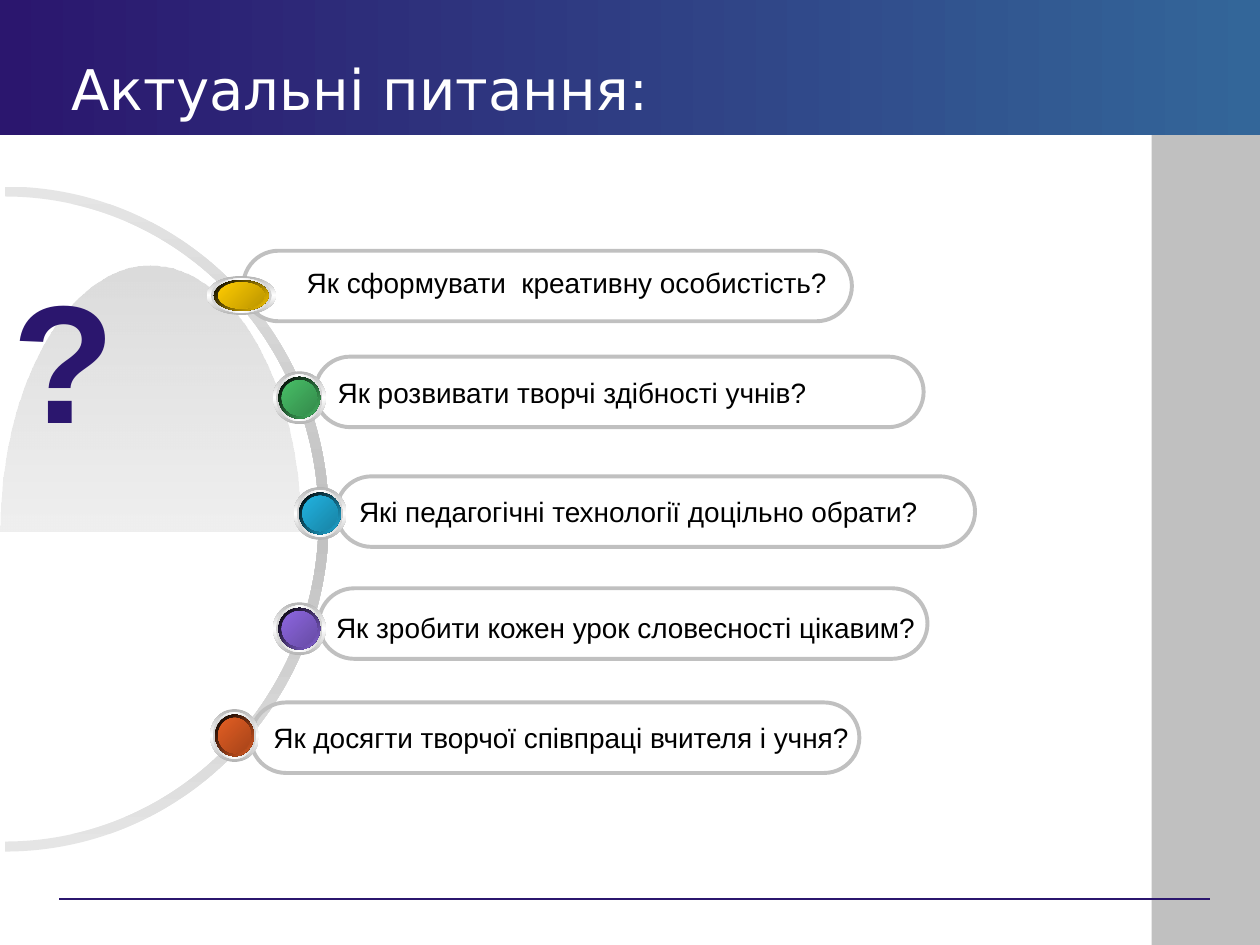
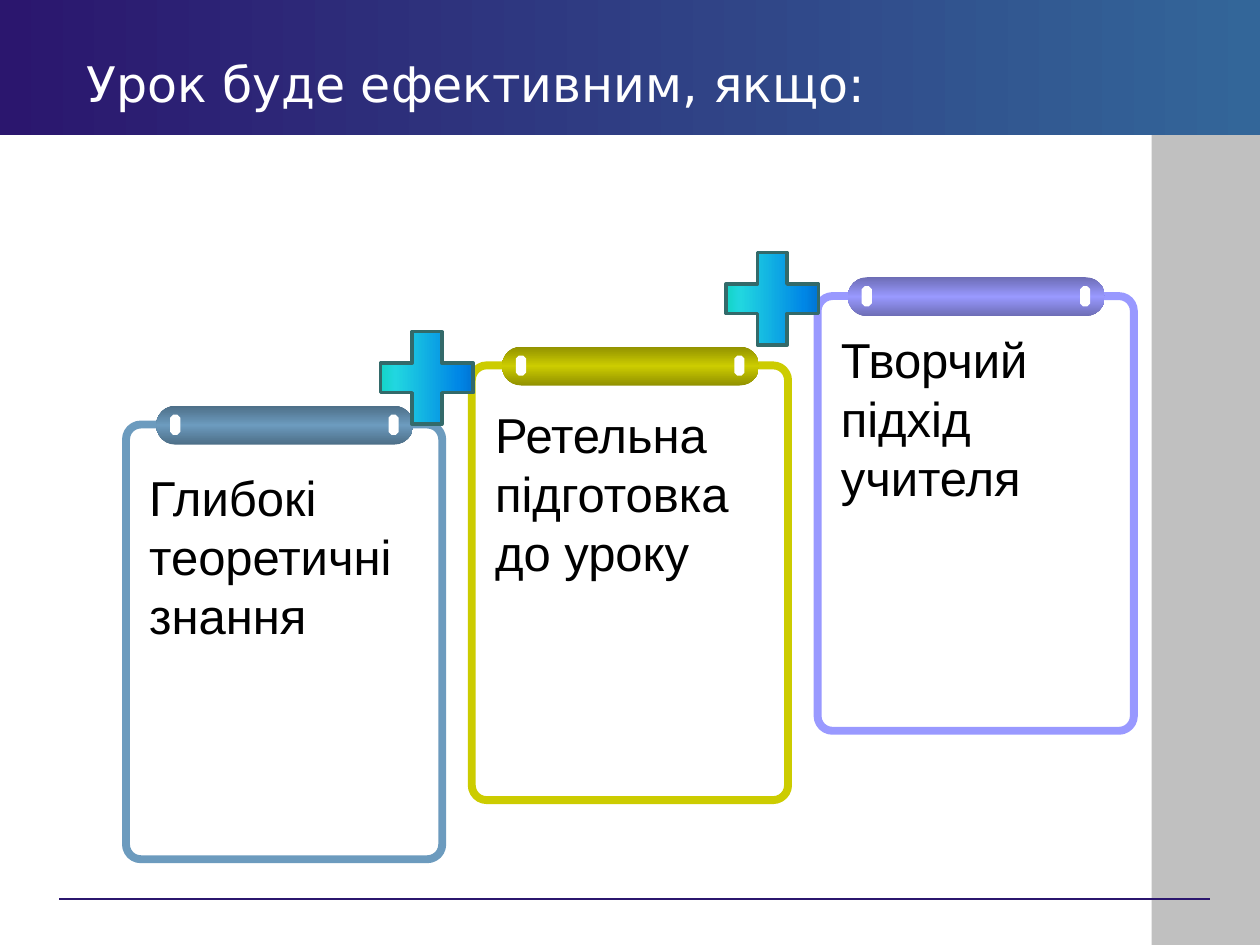
from dataclasses import dataclass

from lxml.etree import SubElement
from pptx import Presentation
from pptx.dml.color import RGBColor
from pptx.enum.shapes import MSO_CONNECTOR as Connector
from pptx.enum.shapes import MSO_SHAPE as Preset
from pptx.enum.text import MSO_ANCHOR as Anchor
from pptx.enum.text import PP_ALIGN as Align
from pptx.oxml.ns import qn
from pptx.shapes.autoshape import Shape
from pptx.slide import Slide
from pptx.text.text import TextFrame
from pptx.util import Pt

COLORS = {
    "navy": "2B166E", "steel": "336699", "silver": "C0C0C0",
    "pale": "E5E5E5", "white": "FFFFFF", "black": "000000",
    "gold": "FFCC00", "green": "48BE67", "cyan": "21B3E1",
    "violet": "8D67E1", "rust": "E35E23",
    "sky": "6C9BBE", "olive": "CCCC00", "lilac": "9999FF",
    "mint": "03D4A8", "aqua": "21D6E0", "azure": "0087E6",
    "cobalt": "005CBF", "plus_edge": "336A6A",
}
BODY_FONT = "Arial"
TITLE_FONT = "DejaVu Sans"
QUARTER_CURVE = 0.5523

Point = tuple[float, float]


@dataclass(frozen=True)
class Box:
    left: float
    top: float
    width: float
    height: float

    def scaled(self, ratio: float) -> "Box":
        width, height = self.width * ratio, self.height * ratio
        return Box(self.left + (self.width - width) / 2,
                   self.top + (self.height - height) / 2, width, height)

    def lengths(self) -> tuple[Pt, Pt, Pt, Pt]:
        return Pt(self.left), Pt(self.top), Pt(self.width), Pt(self.height)


@dataclass(frozen=True)
class Stop:
    position: int
    color: str
    opacity: int = 100
    shade: int = 100


@dataclass(frozen=True)
class Segment:
    end: Point
    corner: Point | None = None


@dataclass(frozen=True)
class Question:
    text: str
    pill: Box
    button: Box
    color: str
    indent: float = 7.2
    raised: float = 0
    lowered: float = 0


@dataclass(frozen=True)
class Condition:
    text: str
    top: float
    text_drop: float
    color: str


QUESTIONS = [
    Question("Як сформувати  креативну особистість?", Box(139, 143.3, 347.8, 40.3),
             Box(118.1, 157.7, 39.6, 22.3), "gold", indent=30.4, raised=4),
    Question("Як розвивати творчі здібності учнів?", Box(180, 203.8, 347.8, 40.3),
             Box(156, 212.2, 30.2, 30.2), "green"),
    Question("Які педагогічні технології доцільно обрати?", Box(192.2, 272.2, 365, 40.3),
             Box(167.8, 278.3, 30.2, 30.2), "cyan"),
    Question("Як зробити кожен урок словесності цікавим?", Box(182.2, 336.2, 347.8, 40.3),
             Box(156, 344.2, 30.2, 30.2), "violet", indent=4, lowered=4.5),
    Question("Як досягти творчої співпраці вчителя і учня?", Box(143.3, 401.4, 347.8, 40.3),
             Box(120, 405.2, 28.1, 30.2), "rust"),
]
CONDITIONS = [
    Condition("Глибокі теоретичні знання", 242.6, 20.9, "sky"),
    Condition("Ретельна підготовка до уроку", 208.8, 18.7, "olive"),
    Condition("Творчий підхід учителя", 169.2, 15.8, "lilac"),
]
CARD_LEFT, CARD_STEP, CARD_WIDTH, CARD_HEIGHT = 72, 197.6, 180.7, 248.4
PLUS_STOPS = [Stop(0, "mint"), Stop(25, "aqua"), Stop(75, "azure"), Stop(100, "cobalt")]


def rgb(color: str) -> RGBColor:
    return RGBColor.from_string(COLORS[color])


def fill_gradient(shape: Shape, stops: list[Stop], angle: int) -> None:
    shape.fill.solid()
    properties = shape.element.spPr
    solid = properties.find(qn("a:solidFill"))
    gradient = properties.makeelement(qn("a:gradFill"), {"rotWithShape": "1"})
    properties.replace(solid, gradient)
    stop_list = SubElement(gradient, qn("a:gsLst"))
    for stop in stops:
        entry = SubElement(stop_list, qn("a:gs"), pos=str(stop.position * 1000))
        color = SubElement(entry, qn("a:srgbClr"), val=COLORS[stop.color])
        for effect, percent in (("a:shade", stop.shade), ("a:alpha", stop.opacity)):
            if percent < 100:
                SubElement(color, qn(effect), val=str(percent * 1000))
    SubElement(gradient, qn("a:lin"), ang=str(angle * 60000), scaled="0")


def fade(start: str, end: str, end_shade: int = 100) -> list[Stop]:
    return [Stop(0, start), Stop(100, end, shade=end_shade)]


def sheen(edge: str, middle: str, edge_shade: int = 100) -> list[Stop]:
    return [Stop(0, edge, shade=edge_shade), Stop(50, middle),
            Stop(100, edge, shade=edge_shade)]


def add_preset(slide: Slide, preset: Preset, box: Box, fill: str | None = None,
               line: str | None = None, weight: float = 0,
               roundness: float | None = None) -> Shape:
    shape = slide.shapes.add_shape(preset, *box.lengths())
    shape.shadow.inherit = False
    if roundness is not None:
        shape.adjustments[0] = roundness
    if fill:
        shape.fill.solid()
        shape.fill.fore_color.rgb = rgb(fill)
    else:
        shape.fill.background()
    if line:
        shape.line.color.rgb = rgb(line)
        shape.line.width = Pt(weight)
    else:
        shape.line.fill.background()
    return shape


def toward(start: Point, corner: Point) -> Point:
    return (start[0] + QUARTER_CURVE * (corner[0] - start[0]),
            start[1] + QUARTER_CURVE * (corner[1] - start[1]))


def add_outline(slide: Slide, start: Point, segments: list[Segment]) -> Shape:
    builder = slide.shapes.build_freeform(Pt(start[0]), Pt(start[1]))
    builder.add_line_segments([(Pt(s.end[0]), Pt(s.end[1])) for s in segments], close=True)
    shape = builder.convert_to_shape()
    shape.shadow.inherit = False
    shape.line.fill.background()
    straights = list(shape.element.spPr.iter(qn("a:lnTo")))
    for straight, segment in zip(straights, segments):
        if segment.corner:
            curve = straight.makeelement(qn("a:cubicBezTo"), {})
            for x, y in (toward(start, segment.corner),
                         toward(segment.end, segment.corner), segment.end):
                SubElement(curve, qn("a:pt"), x=str(Pt(x) - shape.left),
                           y=str(Pt(y) - shape.top))
            straight.getparent().replace(straight, curve)
        start = segment.end
    return shape


def write(frame: TextFrame, text: str, size: float, color: str, font: str = BODY_FONT,
          bold: bool = False, anchor: Anchor = Anchor.TOP, wrap: bool = True) -> None:
    frame.word_wrap = wrap
    frame.vertical_anchor = anchor
    paragraph = frame.paragraphs[0]
    paragraph.alignment = Align.LEFT
    run = paragraph.add_run()
    run.text = text
    run.font.name = font
    run.font.size = Pt(size)
    run.font.bold = bold
    run.font.color.rgb = rgb(color)


def draw_frame(slide: Slide, title: str, title_box: Box, title_size: float) -> None:
    add_preset(slide, Preset.RECTANGLE, Box(658.1, 77, 61.9, 463), "silver")
    rule = slide.shapes.add_connector(
        Connector.STRAIGHT, Pt(33.8), Pt(513.7), Pt(691.2), Pt(513.7))
    rule.line.color.rgb = rgb("navy")
    rule.line.width = Pt(0.75)
    SubElement(rule.element.spPr, qn("a:effectLst"))
    band = add_preset(slide, Preset.RECTANGLE, Box(0, 0, 720, 77))
    fill_gradient(band, fade("navy", "steel"), 0)
    heading = slide.shapes.add_textbox(*title_box.lengths())
    write(heading.text_frame, title, title_size, "white", TITLE_FONT, anchor=Anchor.MIDDLE)


def draw_dial(slide: Slide) -> None:
    left, middle = 2.9, 296.6
    outer_right, outer_top, outer_bottom = 187.9, 106.6, 486.6
    inner_right, inner_top, inner_bottom = 182.2, 112.3, 480.9
    ring = add_outline(slide, (left, outer_top), [
        Segment((outer_right, middle), (outer_right, outer_top)),
        Segment((left, outer_bottom), (outer_right, outer_bottom)),
        Segment((left, inner_bottom)),
        Segment((inner_right, middle), (inner_right, inner_bottom)),
        Segment((left, inner_top), (inner_right, inner_top)),
    ])
    fill_gradient(ring, sheen("pale", "silver"), 90)

    crest, base, width = 151.9, 303.8, 171.4
    dome = add_outline(slide, (0, base), [
        Segment((width / 2, crest), (0, crest)),
        Segment((width, base), (width, crest)),
    ])
    outline = next(dome.element.spPr.iter(qn("a:path")))
    dome.height *= 2
    outline.set("h", str(dome.height))
    fill_gradient(dome, [Stop(0, "silver", 56), Stop(100, "white", 48)], 90)
    dome.text_frame.margin_top = Pt(5.3)
    write(dome.text_frame, "?", 96, "navy", bold=True)
    dome.text_frame.paragraphs[0].line_spacing = 0.92


def draw_pill(slide: Slide, question: Question) -> None:
    pill = add_preset(slide, Preset.ROUNDED_RECTANGLE, question.pill,
                      line="silver", weight=2.25, roundness=0.5)
    frame = pill.text_frame
    frame.margin_left = Pt(question.indent)
    frame.margin_top = Pt(3.6 + question.lowered)
    frame.margin_bottom = Pt(3.6 + question.raised)
    write(frame, question.text, 16, "black", anchor=Anchor.MIDDLE, wrap=False)


def draw_button(slide: Slide, question: Question) -> None:
    layers = [
        (1, sheen("white", "white", 46), 90),
        (0.88, sheen("white", "white", 64), 0),
        (0.79, fade("black", question.color), 45),
        (0.67, fade(question.color, question.color, 49), 45),
    ]
    for ratio, stops, angle in layers:
        layer = add_preset(slide, Preset.OVAL, question.button.scaled(ratio))
        fill_gradient(layer, stops, angle)


def draw_card(slide: Slide, condition: Condition, left: float) -> None:
    top = condition.top
    add_preset(slide, Preset.ROUNDED_RECTANGLE, Box(left, top, CARD_WIDTH, CARD_HEIGHT),
               line=condition.color, weight=4.5, roundness=0.047)
    bar = add_preset(slide, Preset.ROUNDED_RECTANGLE,
                     Box(left + 17.3, top - 10.8, 146.9, 22.3), roundness=0.5)
    fill_gradient(bar, sheen(condition.color, condition.color, 46), 90)
    for offset in (25.2, 150):
        add_preset(slide, Preset.OCTAGON, Box(left + offset, top - 5.6, 5.8, 11.5),
                   "white", roundness=0.293)
    caption = slide.shapes.add_textbox(
        *Box(left + 6.2, top + condition.text_drop, 167.8, 108.7).lengths())
    write(caption.text_frame, condition.text, 28, "black")


def draw_plus(slide: Slide, left: float, top: float) -> None:
    plus = add_preset(slide, Preset.MATH_PLUS, Box(left, top, 72, 72),
                      line="plus_edge", weight=2)
    fill_gradient(plus, PLUS_STOPS, 0)


def build_questions(slide: Slide) -> None:
    draw_frame(slide, "Актуальні питання:", Box(33.8, 28.1, 486, 44.6), 32)
    draw_dial(slide)
    for question in reversed(QUESTIONS):
        draw_pill(slide, question)
    for question in QUESTIONS:
        draw_button(slide, question)


def build_conditions(slide: Slide) -> None:
    draw_frame(slide, "Урок буде ефективним, якщо:", Box(42.3, 25.2, 486, 44.6), 28)
    for index, condition in enumerate(CONDITIONS):
        draw_card(slide, condition, CARD_LEFT + index * CARD_STEP)
    for index, top in enumerate((180, 134.8)):
        draw_plus(slide, 208 + index * 197.3, top)


def main() -> None:
    deck = Presentation()
    deck.slide_width, deck.slide_height = Pt(720), Pt(540)
    blank = deck.slide_layouts[6]
    for build in (build_questions, build_conditions):
        build(deck.slides.add_slide(blank))
    deck.save("out.pptx")


if __name__ == "__main__":
    main()
